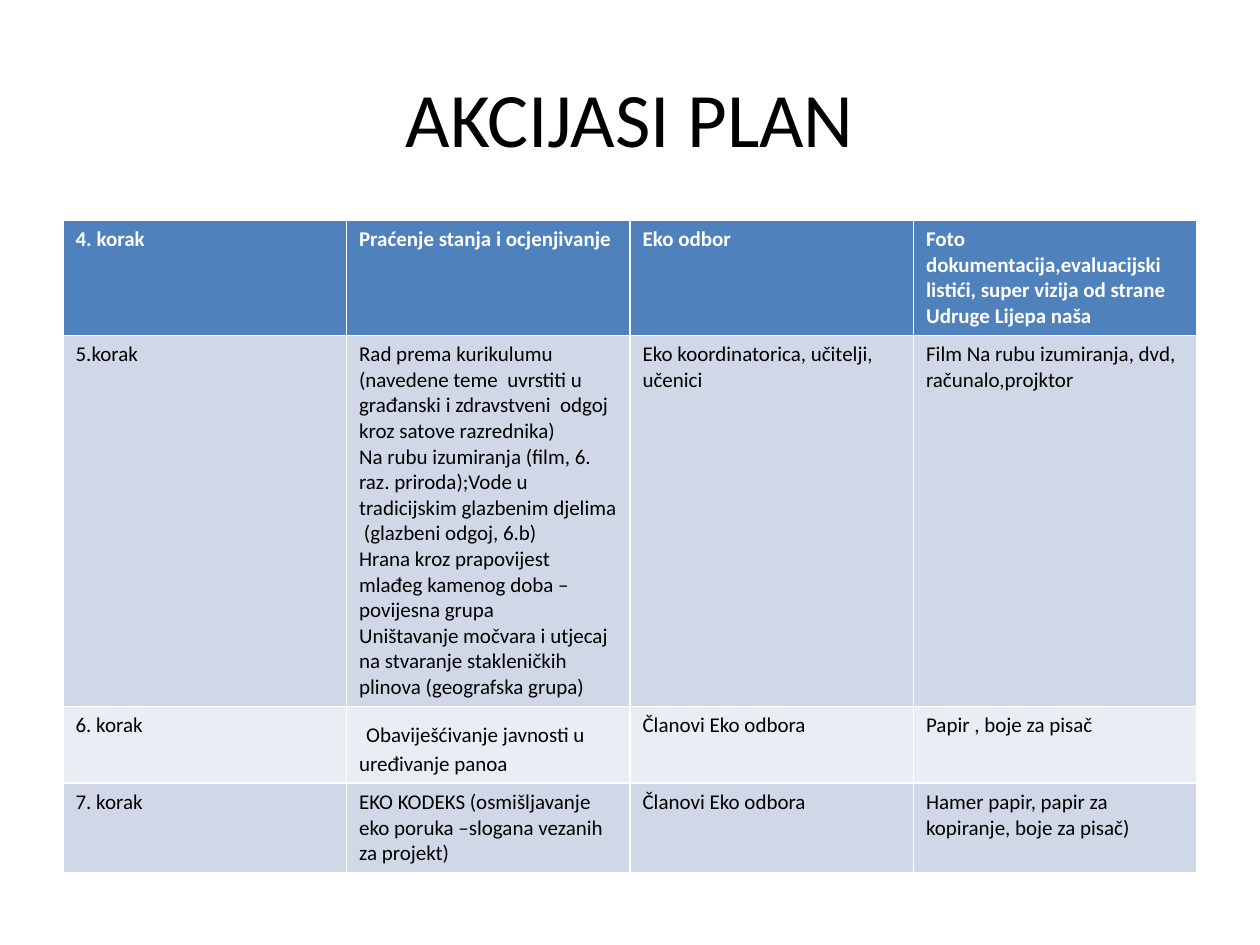
from dataclasses import dataclass

from pptx import Presentation
from pptx.dml.color import RGBColor as RGB
from pptx.enum.text import MSO_ANCHOR as Anchor, PP_ALIGN as Align
from pptx.util import Inches, Pt


@dataclass(frozen=True)
class Theme:
    face: str = "Calibri"
    dark: str = "000000"
    light: str = "FFFFFF"
    head: str = "4F81BD"
    bands: tuple = ("D0D8E8", "E9EDF4")
    title: int = 44
    body: int = 12
    wide: int = 18


THEME = Theme()
COLS = [2.25] * 4
ROWS = [0.9, 2.9, 0.6, 0.7]

# Cell text: one list item per paragraph
STEPS = [
    ["4. korak", "Praćenje stanja i ocjenjivanje", "Eko odbor",
     "Foto dokumentacija,evaluacijski listići, super vizija od strane "
     "Udruge Lijepa naša"],
    ["5.korak",
     ["Rad prema kurikulumu",
      "(navedene teme  uvrstiti u građanski i zdravstveni  odgoj "
      "kroz satove razrednika)",
      "Na rubu izumiranja (film, 6. raz. priroda);Vode u tradicijskim "
      "glazbenim djelima  (glazbeni odgoj, 6.b)",
      "Hrana kroz prapovijest mlađeg kamenog doba –povijesna grupa",
      "Uništavanje močvara i utjecaj na stvaranje stakleničkih plinova "
      "(geografska grupa)"],
     "Eko koordinatorica, učitelji, učenici",
     "Film Na rubu izumiranja, dvd, računalo,projktor"],
    ["6. korak", " Obaviješćivanje javnosti u uređivanje panoa",
     "Članovi Eko odbora", "Papir , boje za pisač"],
    ["7. korak",
     "EKO KODEKS (osmišljavanje eko poruka –slogana vezanih za projekt)",
     "Članovi Eko odbora",
     "Hamer papir, papir za kopiranje, boje za pisač)"],
]


def style(font, size, color, **more):
    look = {"name": THEME.face, "size": Pt(size), **more}
    for key, value in look.items():
        setattr(font, key, value)
    font.color.rgb = RGB.from_string(color)


def add_title(slide, text):
    title = slide.shapes.title
    box = {"left": 0.5, "top": 0.3, "width": 9, "height": 1.25}
    for key, value in box.items():
        setattr(title, key, Inches(value))
    frame = title.text_frame
    frame.text = text
    frame.vertical_anchor = Anchor.MIDDLE
    para = frame.paragraphs[0]
    para.alignment = Align.CENTER
    style(para.runs[0].font, THEME.title, THEME.dark)


def add_run(para, text, size, head):
    run = para.add_run()
    run.text = text
    style(run.font, size, THEME.light if head else THEME.dark, bold=head)


def fill_cell(cell, text, fill, head):
    cell.fill.solid()
    cell.fill.fore_color.rgb = RGB.from_string(fill)
    frame = cell.text_frame
    for i, line in enumerate([text] if isinstance(text, str) else text):
        para = frame.add_paragraph() if i else frame.paragraphs[0]
        # A leading space is set in the wide size
        if line.startswith(" "):
            add_run(para, " ", THEME.wide, head)
            line = line[1:]
        add_run(para, line, THEME.body, head)


def add_plan(slide, steps):
    table = slide.shapes.add_table(
        len(ROWS), len(COLS), Inches(0.5), Inches(1.75),
        Inches(sum(COLS)), Inches(sum(ROWS))).table
    for col, width in zip(table.columns, COLS):
        col.width = Inches(width)
    for row, height in zip(table.rows, ROWS):
        row.height = Inches(height)
    for r, step in enumerate(steps):
        head = r == 0
        fill = THEME.head if head else THEME.bands[(r - 1) % 2]
        for c, text in enumerate(step):
            fill_cell(table.cell(r, c), text, fill, head)


def main():
    deck = Presentation()
    deck.slide_width, deck.slide_height = Inches(10), Inches(7.5)
    slide = deck.slides.add_slide(deck.slide_layouts[5])
    # Heading
    add_title(slide, "AKCIJASI PLAN")
    # Table of steps
    add_plan(slide, STEPS)
    deck.save("out.pptx")


if __name__ == "__main__":
    main()
